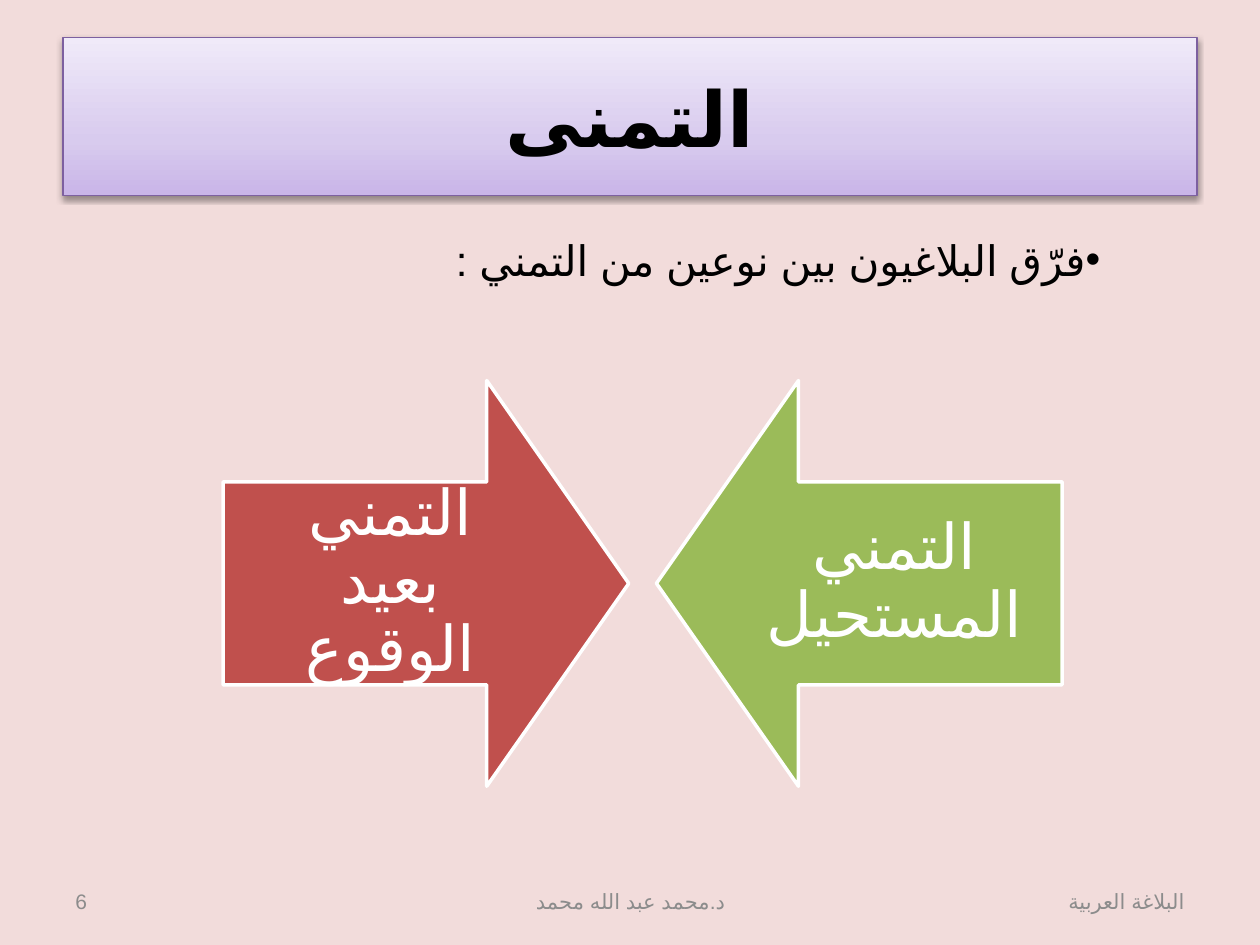
import copy

import pptx
import pptx.dml.color
import pptx.enum.shapes
import pptx.enum.text
import pptx.oxml
import pptx.oxml.ns
import pptx.util
from lxml import etree

Inches = pptx.util.Inches
Pt = pptx.util.Pt
RGBColor = pptx.dml.color.RGBColor
Align = pptx.enum.text.PP_ALIGN
Anchor = pptx.enum.text.MSO_ANCHOR
qn = pptx.oxml.ns.qn

WIDTH, HEIGHT = 10, 7.5
MARGIN = 0.5
BACKGROUND = RGBColor(0xF2, 0xDC, 0xDB)
BLACK = RGBColor(0, 0, 0)
WHITE = RGBColor(0xFF, 0xFF, 0xFF)
GRAY = RGBColor(0x8C, 0x8C, 0x8C)
PURPLE = RGBColor(0x7D, 0x60, 0xA0)
RED = RGBColor(0xC0, 0x50, 0x4D)
GREEN = RGBColor(0x9B, 0xBB, 0x59)
TITLE_STOPS = [
    (0, RGBColor(0xC9, 0xB5, 0xE8)),
    (0.35, RGBColor(0xD8, 0xCB, 0xEE)),
    (1, RGBColor(0xF0, 0xEA, 0xF9)),
]
SERIF, SANS = "Times New Roman", "Calibri"
ARABIC_FONT, ARABIC = "Arial", "ar-SA"

ARROW_SIZE = 3.22
ARROW_TOP = 3.02
ARROW_GAP = 0.22
ARROWS_LEFT = 1.77
LABEL_WIDTH = 2.66


def write(box, text, size, font=SANS, color=BLACK, bold=False, align=Align.CENTER,
          anchor=Anchor.MIDDLE, spacing=None, around=None, inset=None, bullet=None):
    """Put one right-to-left paragraph into a shape."""
    frame = box.text_frame
    frame.word_wrap = True
    frame.vertical_anchor = anchor
    if inset is not None:
        frame.margin_left = frame.margin_right = Inches(inset)
        frame.margin_top = frame.margin_bottom = Inches(inset)
    para = frame.paragraphs[0]
    para.alignment = align
    properties = para._p.get_or_add_pPr()
    properties.set("rtl", "1")
    if spacing:
        para.line_spacing = spacing
    if around is not None:
        para.space_after = Pt(around)
    if bullet:
        properties.set("marL", str(Inches(0.38)))
        properties.set("marR", "0")
        properties.set("indent", str(Inches(0.29)))
        etree.SubElement(properties, qn("a:buFont"), typeface=ARABIC_FONT)
        etree.SubElement(properties, qn("a:buChar"), char=bullet)
    span = para.add_run()
    span.text = text
    span.font.size = Pt(size)
    span.font.bold = bold
    span.font.name = font
    span.font.color.rgb = color
    run_properties = span._r.get_or_add_rPr()
    run_properties.set("lang", ARABIC)
    etree.SubElement(run_properties, qn("a:cs"), typeface=ARABIC_FONT)


def add_text(shapes, left, top, width, height, text, size, **style):
    box = shapes.add_textbox(Inches(left), Inches(top), Inches(width), Inches(height))
    write(box, text, size, **style)


def fill_gradient(shape, stops):
    """Fill from bottom to top with any number of stops."""
    shape.fill.gradient()
    shape.fill.gradient_angle = 90
    stop_list = shape.fill._fill._gradFill.find(qn("a:gsLst"))
    model = copy.deepcopy(stop_list[0])
    stop_list.clear()
    for _ in stops:
        stop_list.append(copy.deepcopy(model))
    for stop, (position, color) in zip(shape.fill.gradient_stops, stops):
        stop.position = position
        stop.color.rgb = color


def add_shadow(shape, blur, distance, opacity):
    effects = etree.SubElement(shape._element.spPr, qn("a:effectLst"))
    shadow = etree.SubElement(effects, qn("a:outerShdw"), blurRad=str(Pt(blur)),
                              dist=str(Pt(distance)), dir="5400000", rotWithShape="0")
    color = etree.SubElement(shadow, qn("a:srgbClr"), val="000000")
    etree.SubElement(color, qn("a:alpha"), val=str(opacity * 1000))


def set_title(page, text):
    title = page.shapes.title
    title.left, title.top = Inches(MARGIN), Inches(0.3)
    title.width, title.height = Inches(WIDTH - 2 * MARGIN), Inches(1.25)
    fill_gradient(title, TITLE_STOPS)
    title.line.color.rgb = PURPLE
    title.line.width = Pt(0.75)
    add_shadow(title, blur=3.1, distance=1.6, opacity=38)
    write(title, text, 44, font=SERIF, bold=True)


def add_arrow(shapes, left, rotation, color, label, label_left):
    size = Inches(ARROW_SIZE)
    arrow = shapes.add_shape(pptx.enum.shapes.MSO_SHAPE.DOWN_ARROW,
                             Inches(left), Inches(ARROW_TOP), size, size)
    arrow.rotation = rotation
    arrow.adjustments[0] = 0.5
    arrow.adjustments[1] = 0.35
    arrow.shadow.inherit = False
    arrow.fill.solid()
    arrow.fill.fore_color.rgb = color
    arrow.line.color.rgb = WHITE
    arrow.line.width = Pt(2)
    add_text(shapes, label_left, ARROW_TOP + ARROW_SIZE / 4, LABEL_WIDTH, ARROW_SIZE / 2,
             label, 36, color=WHITE, spacing=0.9, inset=0.28)


def add_footer(page):
    side = 2.33
    parts = [
        (WIDTH - MARGIN - side, side, "البلاغة العربية ", Align.RIGHT),
        (3.42, 3.17, "د.محمد عبد الله محمد", Align.CENTER),
        (MARGIN, side, "6", Align.LEFT),
    ]
    for left, width, text, align in parts:
        add_text(page.shapes, left, 6.95, width, 0.4, text, 12, color=GRAY, align=align)


def main():
    deck = pptx.Presentation()
    deck.slide_width, deck.slide_height = Inches(WIDTH), Inches(HEIGHT)
    page = deck.slides.add_slide(deck.slide_layouts[5])
    page.background.fill.solid()
    page.background.fill.fore_color.rgb = BACKGROUND

    set_title(page, "التمنى")
    add_footer(page)
    add_text(page.shapes, MARGIN, 1.75, WIDTH - 2 * MARGIN, 4.95,
             "فرّق البلاغيون بين نوعين من التمني :", 24, font=SERIF, align=Align.RIGHT,
             anchor=Anchor.TOP, spacing=1.15, around=6, bullet="•")

    group = page.shapes.add_group_shape().shapes
    right_arrow = ARROWS_LEFT + ARROW_SIZE + ARROW_GAP
    add_arrow(group, ARROWS_LEFT, 270, RED, "التمني بعيد الوقوع", ARROWS_LEFT)
    add_arrow(group, right_arrow, 90, GREEN, "التمني المستحيل",
              right_arrow + ARROW_SIZE - LABEL_WIDTH)

    deck.save("out.pptx")


if __name__ == "__main__":
    main()
